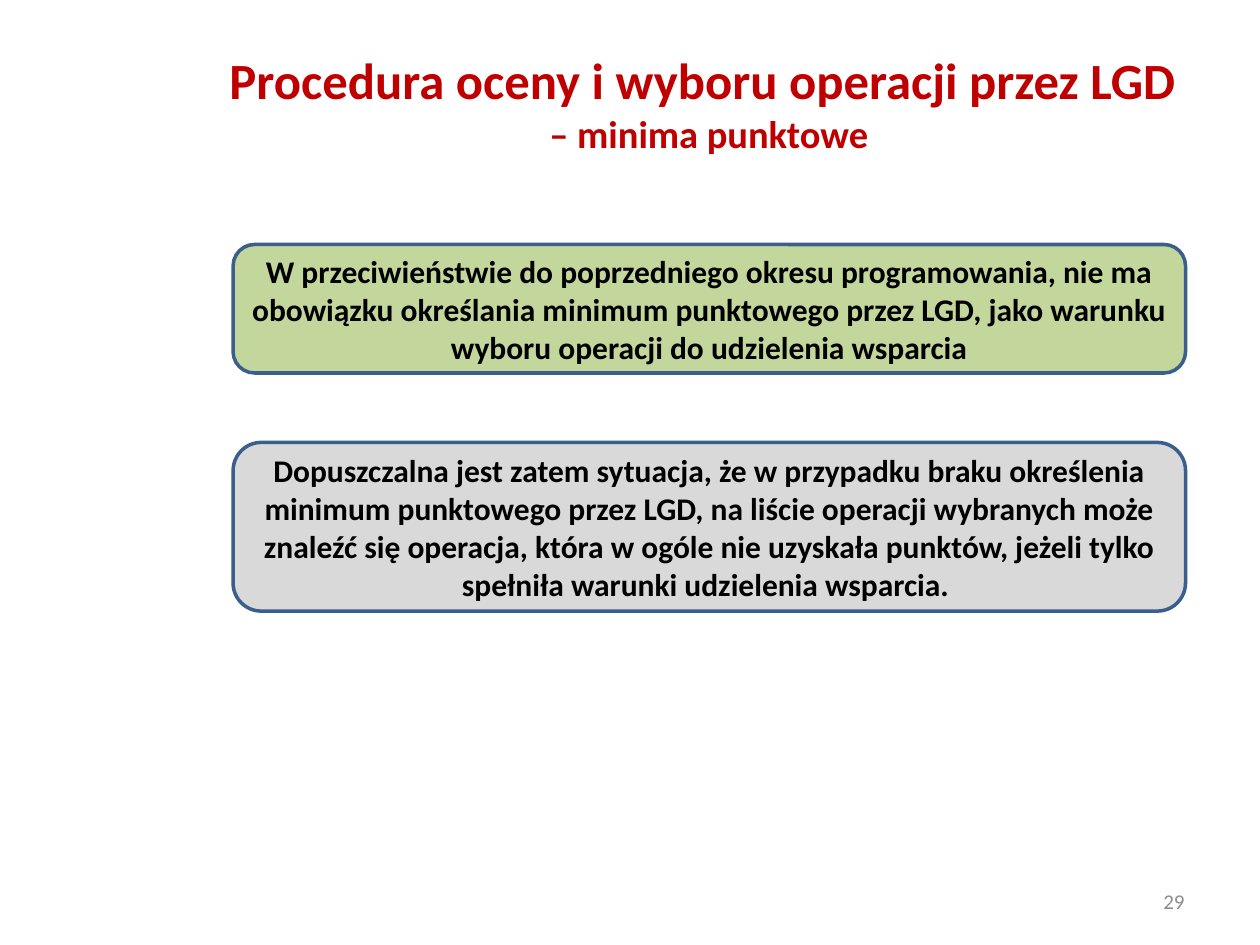
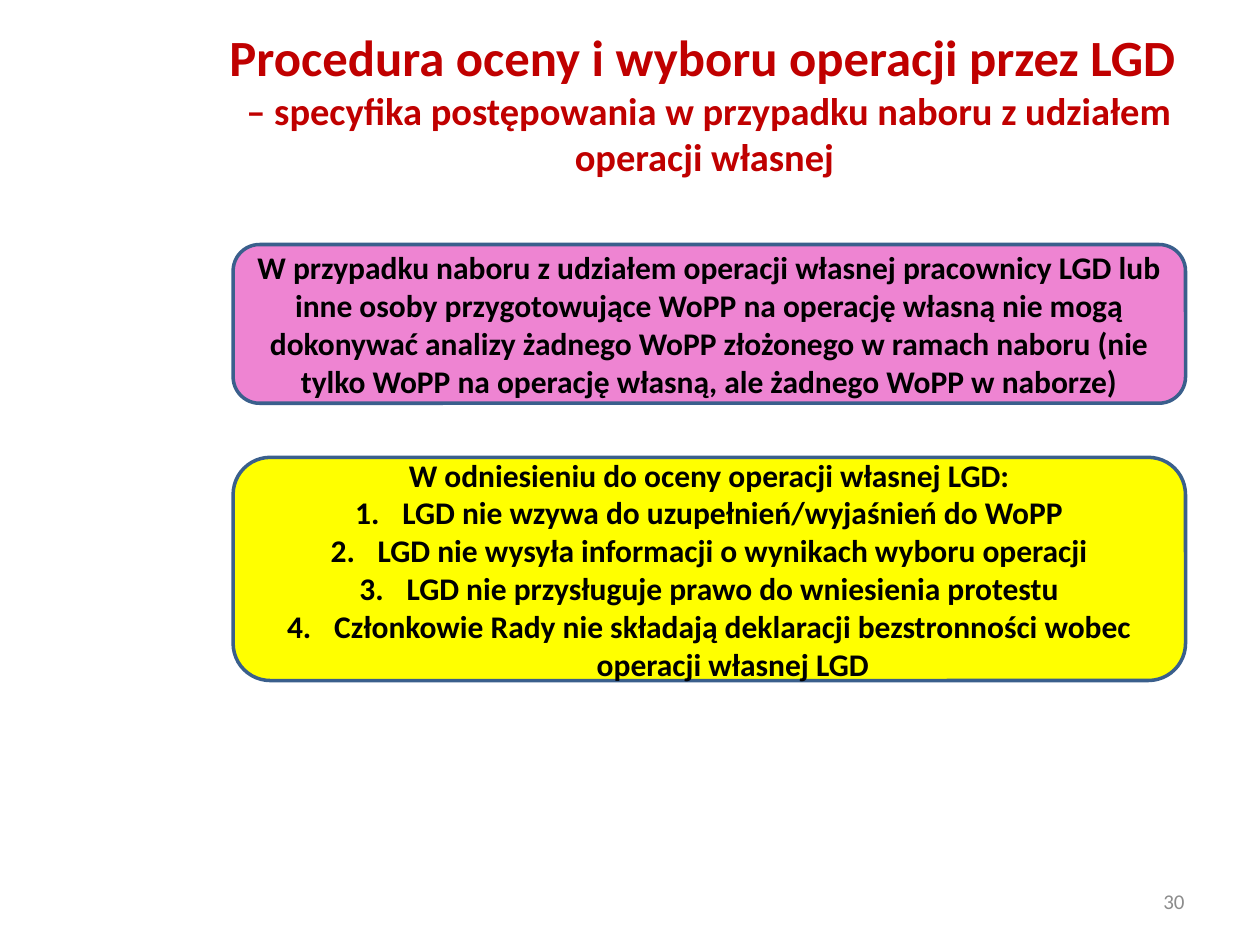
from lxml.etree import SubElement
from pptx import Presentation
from pptx.dml.color import RGBColor
from pptx.enum.shapes import MSO_SHAPE as Shape
from pptx.enum.text import MSO_ANCHOR as Anchor, PP_ALIGN as Align
from pptx.oxml.ns import qn
from pptx.util import Cm, Pt

FONT = "Calibri"
RED, BLUE, GREY, BLACK = "C00000", "3A5F8C", "8C8C8C", "000000"
GREEN, SILVER, PINK, YELLOW = "C3D69B", "D9D9D9", "EE84D2", "FFFF00"

HEADING = "Procedura oceny i wyboru operacji przez LGD "
TITLE_AREA = (3.38, 0.2, 21.82, 3.73)
NUMBER_AREA = (18.21, 17.65, 5.92, 1.02)
PANEL_LEFT, PANEL_WIDTH = 4.7, 19.2
LIST_INDENT = 0.95

# Each panel: top and height in cm, fill, statement, numbered points
SLIDES = [
    {
        "number": 29,
        "subtitle": "– minima punktowe",
        "panels": [
            (4.93, 2.59, GREEN,
             "W przeciwieństwie do poprzedniego okresu programowania, nie ma "
             "obowiązku określania minimum punktowego przez LGD, jako warunku "
             "wyboru operacji do udzielenia wsparcia", []),
            (8.92, 3.4, SILVER,
             "Dopuszczalna jest zatem sytuacja, że w przypadku braku określenia "
             "minimum punktowego przez LGD, na liście operacji wybranych może "
             "znaleźć się operacja, która w ogóle nie uzyskała punktów, jeżeli "
             "tylko spełniła warunki udzielenia wsparcia. ", []),
        ],
    },
    {
        "number": 30,
        "subtitle": "– specyfika postępowania w przypadku naboru z udziałem "
                    "operacji własnej ",
        "panels": [
            (4.93, 3.2, PINK,
             "W przypadku naboru z udziałem operacji własnej pracownicy LGD lub "
             "inne osoby przygotowujące WoPP na operację własną nie mogą "
             "dokonywać analizy żadnego WoPP złożonego w ramach naboru (nie "
             "tylko WoPP na operację własną, ale żadnego WoPP w naborze)", []),
            (9.22, 4.5, YELLOW,
             "W odniesieniu do oceny operacji własnej LGD:",
             ["LGD nie wzywa do uzupełnień/wyjaśnień do WoPP",
              "LGD nie wysyła informacji o wynikach wyboru operacji",
              "LGD nie przysługuje prawo do wniesienia protestu",
              "Członkowie Rady nie składają deklaracji bezstronności wobec "
              "operacji własnej LGD"]),
        ],
    },
]


def color(value):
    return RGBColor.from_string(value)


def style_text(frame, sizes, text_color, bold, align):
    """Format the frame; sizes holds one size for each run of a paragraph."""
    frame.word_wrap = True
    frame.vertical_anchor = Anchor.MIDDLE
    for para in frame.paragraphs:
        para.alignment = align
        for span, size in zip(para.runs, sizes):
            span.font.name = FONT
            span.font.size = Pt(size)
            span.font.bold = bold
            span.font.color.rgb = color(text_color)


def add_text(page, area, text, sizes, text_color, bold, align):
    box = page.shapes.add_textbox(*map(Cm, area))
    box.text_frame.text = text
    style_text(box.text_frame, sizes, text_color, bold, align)


def number_paragraph(para):
    props = para._p.get_or_add_pPr()
    props.set("marL", str(Cm(LIST_INDENT)))
    props.set("indent", str(-Cm(LIST_INDENT)))
    SubElement(props, qn("a:buFont"), typeface="+mj-lt")
    SubElement(props, qn("a:buAutoNum"), type="arabicPeriod")


def add_panel(page, top, height, fill, statement, points):
    area = (PANEL_LEFT, top, PANEL_WIDTH, height)
    panel = page.shapes.add_shape(Shape.ROUNDED_RECTANGLE, *map(Cm, area))
    panel.shadow.inherit = False
    panel.fill.solid()
    panel.fill.fore_color.rgb = color(fill)
    panel.line.color.rgb = color(BLUE)
    panel.line.width = Pt(2)
    frame = panel.text_frame
    frame.text = statement
    for point in points:
        para = frame.add_paragraph()
        para.text = point
        number_paragraph(para)
    style_text(frame, [18], BLACK, True, Align.CENTER)


def main():
    deck = Presentation()
    deck.slide_width, deck.slide_height = Cm(25.4), Cm(19.05)
    for content in SLIDES:
        page = deck.slides.add_slide(deck.slide_layouts[6])
        add_text(page, TITLE_AREA, HEADING + "\v" + content["subtitle"],
                 [29, 22], RED, True, Align.CENTER)
        add_text(page, NUMBER_AREA, str(content["number"]),
                 [12], GREY, False, Align.RIGHT)
        for panel in content["panels"]:
            add_panel(page, *panel)
    deck.save("out.pptx")


if __name__ == "__main__":
    main()
